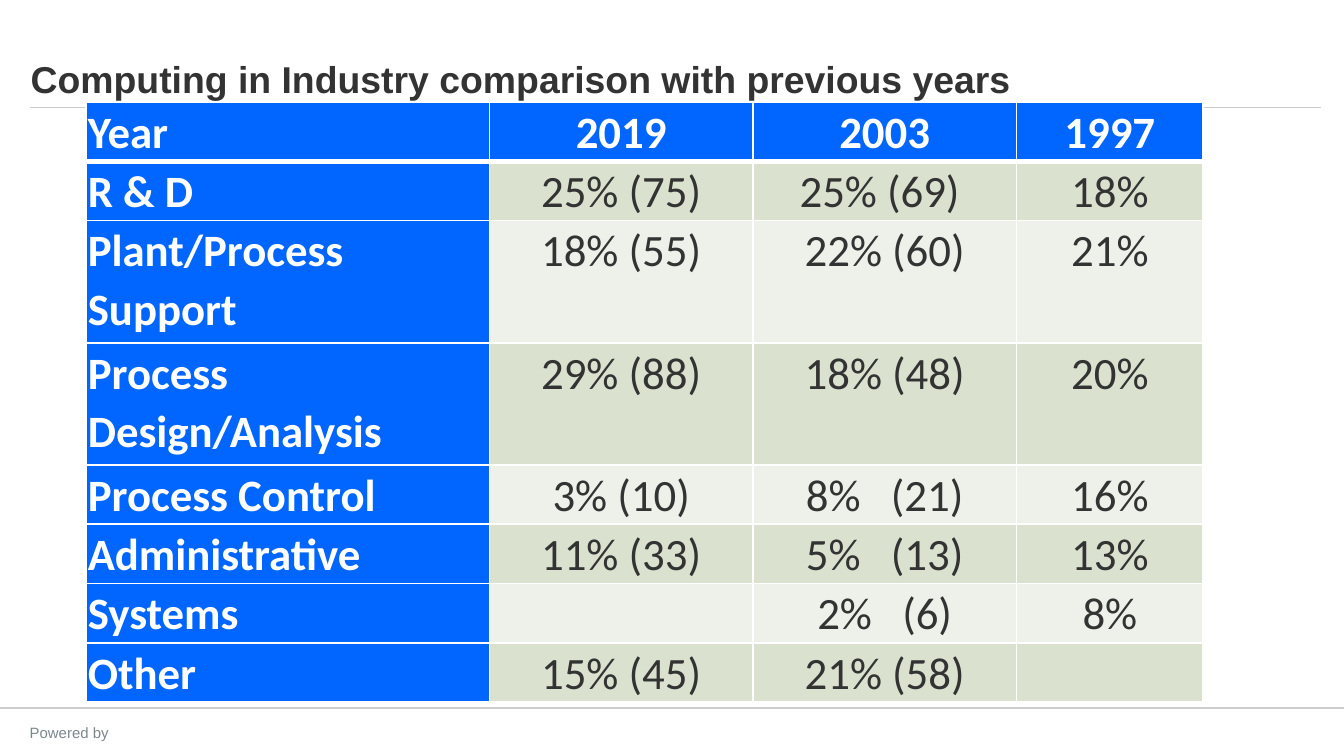
from dataclasses import dataclass

from lxml.etree import SubElement
from pptx import Presentation
from pptx.dml.color import RGBColor as Color
from pptx.enum.shapes import MSO_CONNECTOR as Connector
from pptx.enum.text import MSO_ANCHOR as Anchor, PP_ALIGN as Align
from pptx.oxml import parse_xml
from pptx.oxml.ns import nsdecls, qn
from pptx.util import Cm, Pt


@dataclass(frozen=True)
class Theme:
    """Colours, fonts and type sizes of the slide."""
    ink: str = "333333"
    white: str = "FFFFFF"
    blue: str = "0066FF"
    bands: tuple = ("DAE2CF", "EEF1E9")
    rule: str = "CCCCCC"
    muted: str = "7C878E"
    text_font: str = "Arial"
    table_font: str = "Calibri"
    title_size: int = 20
    table_size: int = 24
    footer_size: int = 8
    wide_gap: int = 1080


THEME = Theme()
COLUMN_WIDTHS = (7.62, 4.98, 4.98, 3.53)
SINGLE_ROW, DOUBLE_ROW = 1.12, 2.31
ROWS = (
    ("Year", "2019", "2003", "1997"),
    ("R & D", "25% (75)", "25% (69) ", "18%"),
    ("Plant/Process Support", "18% (55)", "22% (60)", "21%"),
    ("Process Design/Analysis", "29% (88)", "18% (48)", "20%"),
    ("Process Control", "3% (10)", ("8%", "(21)"), "16%"),
    ("Administrative", "11% (33)", ("5%", "(13)"), "13%"),
    ("Systems", "", ("2%", "(6)"), "8%"),
    ("Other", "15% (45)", "21% (58)", ""),
)
TWO_LINE_ROWS = (2, 3)


def set_font(font, name, size, color, bold=False):
    """Apply typeface, size, colour and weight."""
    font.name, font.size, font.bold = name, Pt(size), bold
    font.color.rgb = Color.from_string(color)


def add_rule(page, left, right, top, weight):
    """Draw a horizontal grey line."""
    line = page.shapes.add_connector(Connector.STRAIGHT, Cm(left), Cm(top), Cm(right), Cm(top))
    line.line.color.rgb = Color.from_string(THEME.rule)
    line.line.width = Pt(weight)
    SubElement(line._element.spPr, qn("a:effectLst"))


def add_text(page, text, left, top, width, height, anchor, align):
    """Add a wrapped text box and return its paragraph."""
    box = page.shapes.add_textbox(Cm(left), Cm(top), Cm(width), Cm(height))
    frame = box.text_frame
    frame.word_wrap, frame.vertical_anchor = True, anchor
    para = frame.paragraphs[0]
    para.text, para.alignment = text, align
    return para


def set_borders(cell, top, bottom):
    """Outline a cell in white with the given top and bottom weights."""
    properties = cell._tc.get_or_add_tcPr()
    sides = (("lnL", 1), ("lnR", 1), ("lnT", top), ("lnB", bottom))
    for position, (side, weight) in enumerate(sides):
        border = parse_xml(
            f'<a:{side} {nsdecls("a")} w="{Pt(weight)}"><a:solidFill>'
            f'<a:srgbClr val="{THEME.white}"/></a:solidFill></a:{side}>')
        properties.insert(position, border)


def write_wide_pair(para, share, count):
    """Write a share and a count parted by one widened space."""
    para.add_run().text = share
    gap = para.add_run()
    gap.text = " "
    gap._r.get_or_add_rPr().set("spc", str(THEME.wide_gap))
    para.add_run().text = count


def fill_cell(cell, content, row, column):
    """Style one table cell and write its content."""
    heading = row == 0 or column == 0
    cell.margin_left = cell.margin_right = Cm(0.03)
    cell.margin_top = cell.margin_bottom = Cm(0)
    cell.fill.solid()
    fill = THEME.blue if heading else THEME.bands[(row - 1) % 2]
    cell.fill.fore_color.rgb = Color.from_string(fill)
    set_borders(cell, 3 if row == 1 else 1, 3 if row == 0 else 1)
    para = cell.text_frame.paragraphs[0]
    if isinstance(content, tuple):
        write_wide_pair(para, *content)
    else:
        para.text = content
    para.alignment = Align.LEFT if column == 0 else Align.CENTER
    para.line_spacing = 1.07
    color = THEME.white if heading else THEME.ink
    set_font(para.font, THEME.table_font, THEME.table_size, color, heading)


def add_usage_table(page):
    """Add the table comparing the surveyed years."""
    heights = [DOUBLE_ROW if row in TWO_LINE_ROWS else SINGLE_ROW for row in range(len(ROWS))]
    table = page.shapes.add_table(
        len(ROWS), len(COLUMN_WIDTHS), Cm(1.63), Cm(1.93),
        Cm(sum(COLUMN_WIDTHS)), Cm(sum(heights))).table
    table.horz_banding = False
    for column, width in zip(table.columns, COLUMN_WIDTHS):
        column.width = Cm(width)
    for row, contents in enumerate(ROWS):
        table.rows[row].height = Cm(heights[row])
        for column, content in enumerate(contents):
            fill_cell(table.cell(row, column), content, row, column)


def main():
    """Build and save the slide."""
    deck = Presentation()
    deck.slide_width, deck.slide_height = Cm(25.4), Cm(14.29)
    page = deck.slides.add_slide(deck.slide_layouts[6])
    add_rule(page, 0, 25.4, 13.39, 1)
    add_rule(page, 0.56, 24.97, 2.03, 0.5)
    footer = add_text(page, "Powered by", -0.15, 13.56, 2.92, 0.46, Anchor.TOP, Align.CENTER)
    set_font(footer.font, THEME.text_font, THEME.footer_size, THEME.muted)
    title = add_text(page, "Computing in Industry comparison with previous years",
                     0.33, 0.64, 22.86, 1.4, Anchor.BOTTOM, Align.LEFT)
    set_font(title.font, THEME.text_font, THEME.title_size, THEME.ink, True)
    add_usage_table(page)
    deck.save("out.pptx")


if __name__ == "__main__":
    main()
